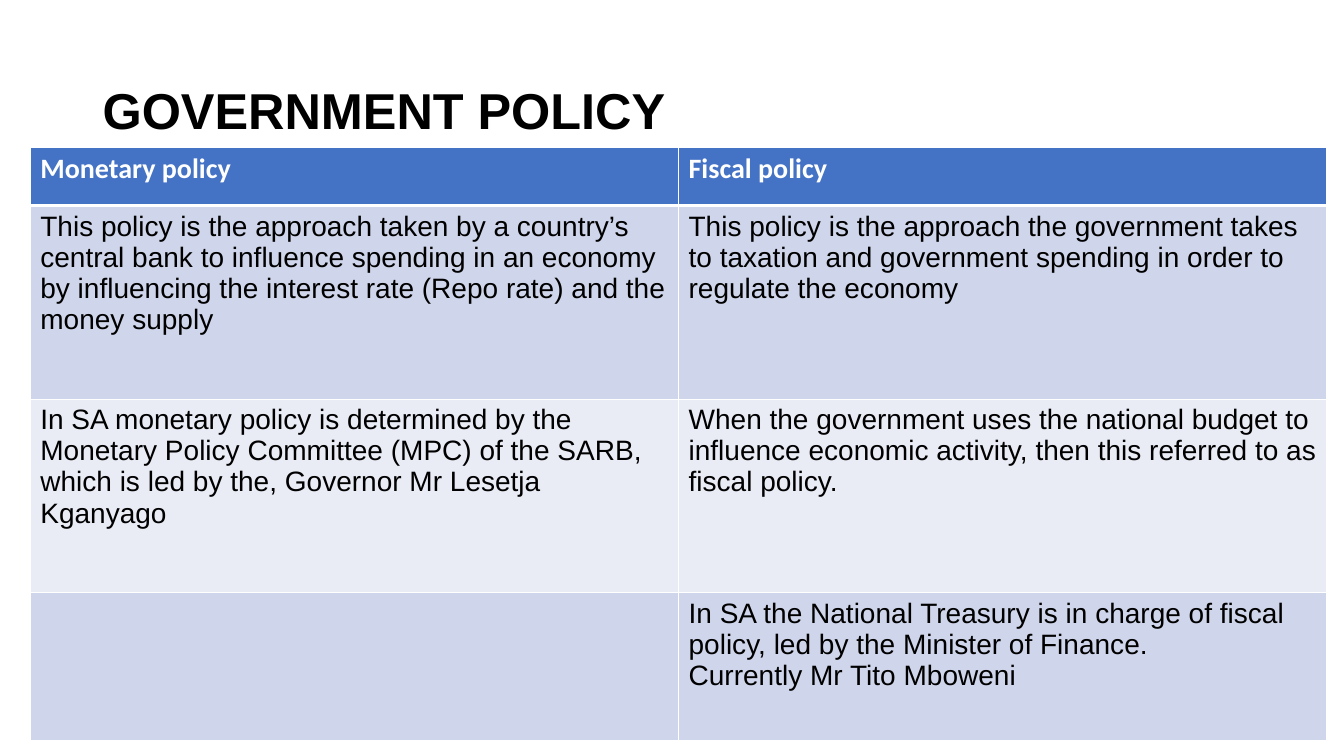
from dataclasses import dataclass

import lxml.etree
import pptx
import pptx.dml.color
import pptx.enum.text
import pptx.oxml.ns
import pptx.util
from pptx.util import Inches

COLORS = {
    "white": "FFFFFF",
    "black": "000000",
    "header": "4472C4",
    "dark_band": "CFD5EA",
    "light_band": "E9EBF5",
}


@dataclass(frozen=True)
class TextStyle:
    font: str
    size: int
    color: str
    bold: bool = False


@dataclass(frozen=True)
class PolicyRow:
    height: float
    fill: str
    style: TextStyle
    monetary: str
    fiscal: str
    top_border: int = 1
    bottom_border: int = 1


TITLE_STYLE = TextStyle("Arial", 36, "black", True)
HEADER_STYLE = TextStyle("Calibri", 20, "white", True)
BODY_STYLE = TextStyle("Arial", 20, "black")

POLICY_ROWS = [
    PolicyRow(0.58, "header", HEADER_STYLE, "Monetary policy", "Fiscal policy", bottom_border=3),
    PolicyRow(
        1.92, "dark_band", BODY_STYLE,
        "This policy is the approach taken by a country’s central bank to influence spending "
        "in an economy by influencing the interest rate (Repo rate) and the money supply",
        "This policy is the approach the government takes to taxation and government spending "
        "in order to regulate the economy",
        top_border=3,
    ),
    PolicyRow(
        1.92, "light_band", BODY_STYLE,
        "In SA monetary policy is determined by the Monetary Policy Committee (MPC) of the SARB, "
        "which is led by the, Governor Mr Lesetja Kganyago",
        "When the government uses the national budget to influence economic activity, "
        "then this referred to as fiscal policy.",
    ),
    PolicyRow(
        1.47, "dark_band", BODY_STYLE,
        "",
        "In SA the National Treasury is in charge of fiscal policy, led by the Minister of "
        "Finance.\nCurrently Mr Tito Mboweni",
    ),
]
COLUMN_WIDTH = 6.43


def rgb(name: str) -> pptx.dml.color.RGBColor:
    return pptx.dml.color.RGBColor.from_string(COLORS[name])


def write_text(text_frame, text: str, style: TextStyle) -> None:
    text_frame.text = text
    for paragraph in text_frame.paragraphs:
        paragraph.font.name = style.font
        paragraph.font.size = pptx.util.Pt(style.size)
        paragraph.font.bold = style.bold
        paragraph.font.color.rgb = rgb(style.color)


def set_borders(cell, top: int, bottom: int) -> None:
    # Border elements must precede the fill in the cell properties
    properties = cell._tc.get_or_add_tcPr()
    widths = {"a:lnL": 1, "a:lnR": 1, "a:lnT": top, "a:lnB": bottom}
    for position, (tag, width) in enumerate(widths.items()):
        line = lxml.etree.Element(pptx.oxml.ns.qn(tag), w=str(pptx.util.Pt(width)))
        fill = lxml.etree.SubElement(line, pptx.oxml.ns.qn("a:solidFill"))
        lxml.etree.SubElement(fill, pptx.oxml.ns.qn("a:srgbClr"), val=COLORS["white"])
        properties.insert(position, line)


def add_title(slide, text: str) -> None:
    title = slide.shapes.add_textbox(Inches(0.92), Inches(0.4), Inches(11.5), Inches(1.45))
    title.text_frame.word_wrap = True
    title.text_frame.vertical_anchor = pptx.enum.text.MSO_ANCHOR.MIDDLE
    write_text(title.text_frame, text, TITLE_STYLE)
    title.text_frame.paragraphs[0].line_spacing = 0.9


def add_policy_table(slide, rows: list[PolicyRow]) -> None:
    total_height = sum(row.height for row in rows)
    table = slide.shapes.add_table(
        len(rows), 2, Inches(0.3), Inches(1.46), Inches(2 * COLUMN_WIDTH), Inches(total_height)
    ).table
    for column in table.columns:
        column.width = Inches(COLUMN_WIDTH)
    for row_index, row in enumerate(rows):
        table.rows[row_index].height = Inches(row.height)
        for column_index, text in enumerate((row.monetary, row.fiscal)):
            cell = table.cell(row_index, column_index)
            cell.fill.solid()
            cell.fill.fore_color.rgb = rgb(row.fill)
            write_text(cell.text_frame, text, row.style)
            set_borders(cell, row.top_border, row.bottom_border)


def main() -> None:
    presentation = pptx.Presentation()
    presentation.slide_width = Inches(13.33)
    presentation.slide_height = Inches(7.5)
    slide = presentation.slides.add_slide(presentation.slide_layouts[6])

    # Title, then the two-column comparison over its lower edge
    add_title(slide, "GOVERNMENT POLICY")
    add_policy_table(slide, POLICY_ROWS)

    presentation.save("out.pptx")


if __name__ == "__main__":
    main()
